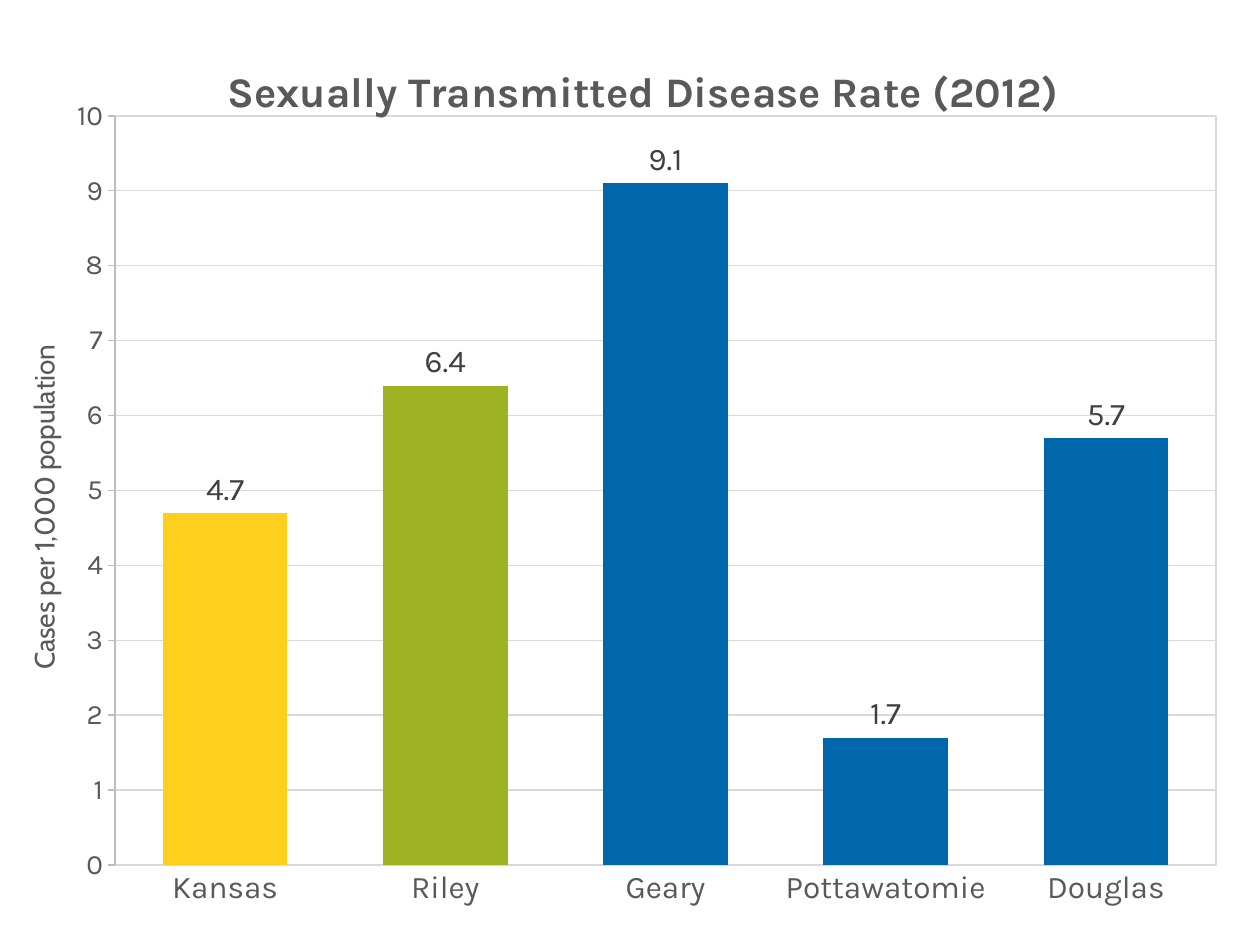
from lxml import etree
from pptx import Presentation
from pptx.chart.data import CategoryChartData
from pptx.dml.color import RGBColor
from pptx.enum.chart import XL_CHART_TYPE, XL_LABEL_POSITION, XL_TICK_MARK
from pptx.oxml import parse_xml
from pptx.oxml.ns import qn
from pptx.util import Pt

COLUMNS = XL_CHART_TYPE.COLUMN_CLUSTERED
OUTSIDE_END = XL_LABEL_POSITION.OUTSIDE_END
TICK_NONE = XL_TICK_MARK.NONE
TICK_OUT = XL_TICK_MARK.OUTSIDE

PX = 914400 // 126
BLANK = 6
COLORS = {
    "text": "595959",
    "label": "404040",
    "grid": "D9D9D9",
    "axis": "BDBDBD",
    "series": "066243",
    "state": "FFCF1D",
    "home": "9EB323",
    "peer": "0067AA",
}
RATES = [
    ("Kansas", 4.7, "state"),
    ("Riley", 6.4, "home"),
    ("Geary", 9.1, "peer"),
    ("Pottawatomie", 1.7, "peer"),
    ("Douglas", 5.7, "peer"),
]
VALUE_SCALE = {
    "minimum_scale": 0,
    "maximum_scale": 10,
    "major_unit": 1,
    "major_tick_mark": TICK_OUT,
    "minor_tick_mark": TICK_NONE,
    "has_major_gridlines": True,
}
CATEGORY_SCALE = {
    "major_tick_mark": TICK_NONE,
    "minor_tick_mark": TICK_NONE,
    "has_major_gridlines": False,
}
LABEL_FORMAT = {
    "show_value": True,
    "number_format": "#,##0.0",
    "number_format_is_linked": False,
    "position": OUTSIDE_END,
}


def color(name):
    return RGBColor.from_string(COLORS[name])


def apply(target, values):
    for name, value in values.items():
        setattr(target, name, value)


def style_font(font, size, name="Karla", tint="text", bold=False):
    apply(font, {"size": Pt(size), "name": name, "bold": bold})
    font.color.rgb = color(tint)


def style_line(line, tint):
    line.color.rgb = color(tint)
    line.width = Pt(0.75)


def place(part, index, frame, fractions, inner=False):
    layout = part.find(qn("c:layout"))
    if layout is not None:
        part.remove(layout)
    layout = etree.Element(qn("c:layout"))
    part.insert(index, layout)
    manual = etree.SubElement(layout, qn("c:manualLayout"))
    settings = [("layoutTarget", "inner")] if inner else []
    settings += [("xMode", "edge"), ("yMode", "edge")]
    spans = (frame[2], frame[3]) * 2
    settings += [
        (key, f"{length / span:.4f}")
        for key, length, span in zip("xywh", fractions, spans)
    ]
    for key, value in settings:
        etree.SubElement(manual, qn(f"c:{key}")).set("val", value)


def write_title(title, words, frame, corner, **style):
    title.text_frame.text = words
    style_font(title.text_frame.paragraphs[0].runs[0].font, **style)
    place(title._element, 1, frame, corner)


def add_rate_chart(slide, frame):
    rates = CategoryChartData()
    rates.categories = [county for county, _, _ in RATES]
    rates.add_series("Series 1", [rate for _, rate, _ in RATES])
    box = [length * PX for length in frame]
    chart = slide.shapes.add_chart(COLUMNS, *box, rates).chart
    chart.has_legend = False
    apply(chart.font, {"name": "Cabin", "size": Pt(10)})

    chart.has_title = True
    write_title(chart.chart_title, "Sexually Transmitted Disease Rate (2012)",
                frame, (210, 36), size=24, bold=True)

    plot = chart.plots[0]
    apply(plot, {"gap_width": 77, "vary_by_categories": False})
    style_bars(plot.series[0])
    style_axes(chart, frame)

    plot_area = chart._chartSpace.chart.plotArea
    place(plot_area, 0, frame, (105, 95, 1101, 749), inner=True)
    plot_area.append(parse_xml(
        '<c:spPr xmlns:c="http://schemas.openxmlformats.org/drawingml/2006/chart" '
        'xmlns:a="http://schemas.openxmlformats.org/drawingml/2006/main">'
        '<a:noFill/><a:ln w="9525"><a:solidFill>'
        f'<a:srgbClr val="{COLORS["grid"]}"/></a:solidFill></a:ln></c:spPr>'
    ))


def style_bars(series):
    series.format.fill.solid()
    series.format.fill.fore_color.rgb = color("series")
    for index, (_, _, group) in enumerate(RATES):
        fill = series.points[index].format.fill
        fill.solid()
        fill.fore_color.rgb = color(group)
    labels = series.data_labels
    apply(labels, LABEL_FORMAT)
    style_font(labels.font, 18, tint="label")


def style_axes(chart, frame):
    counties, cases = chart.category_axis, chart.value_axis
    for axis, scale, size, tint in (
        (counties, CATEGORY_SCALE, 18, "grid"),
        (cases, VALUE_SCALE, 16, "axis"),
    ):
        apply(axis, scale)
        style_font(axis.tick_labels.font, size)
        style_line(axis.format.line, tint)
    style_line(cases.major_gridlines.format.line, "grid")
    apply(cases.tick_labels, {"number_format": "#,##0", "number_format_is_linked": False})
    cases.has_title = True
    write_title(cases.axis_title, "Cases per 1,000 population",
                frame, (10, 319), size=16, name="Cabin")
    body = cases.axis_title.text_frame._txBody.find(qn("a:bodyPr"))
    apply_rotation = {"rot": "-5400000", "vert": "horz"}
    for key, value in apply_rotation.items():
        body.set(key, value)


def main():
    deck = Presentation()
    apply(deck, {"slide_width": 1260 * PX, "slide_height": 945 * PX})
    slide = deck.slides.add_slide(deck.slide_layouts[BLANK])
    add_rate_chart(slide, (10, 21, 1250, 903))
    deck.save("out.pptx")


if __name__ == "__main__":
    main()
